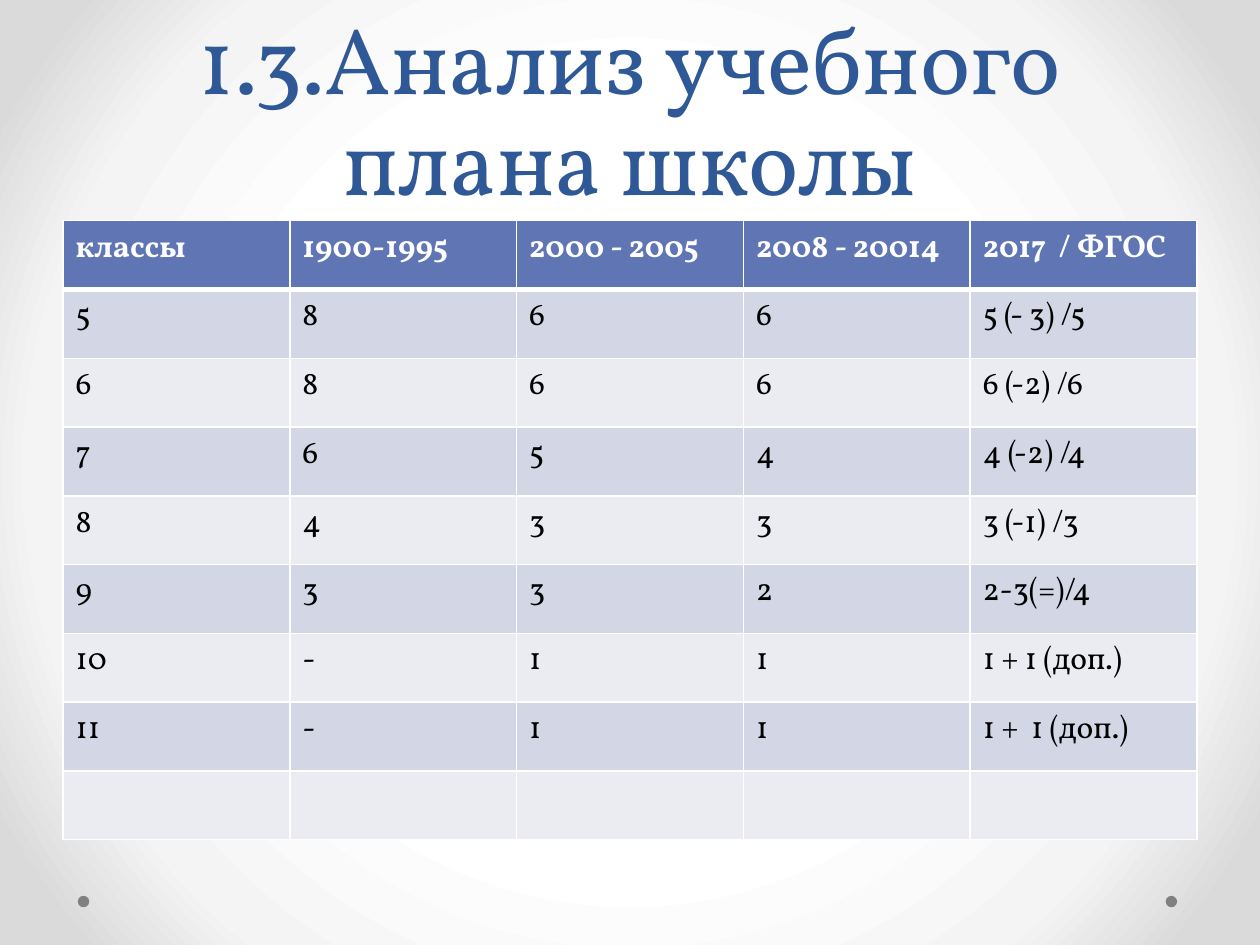
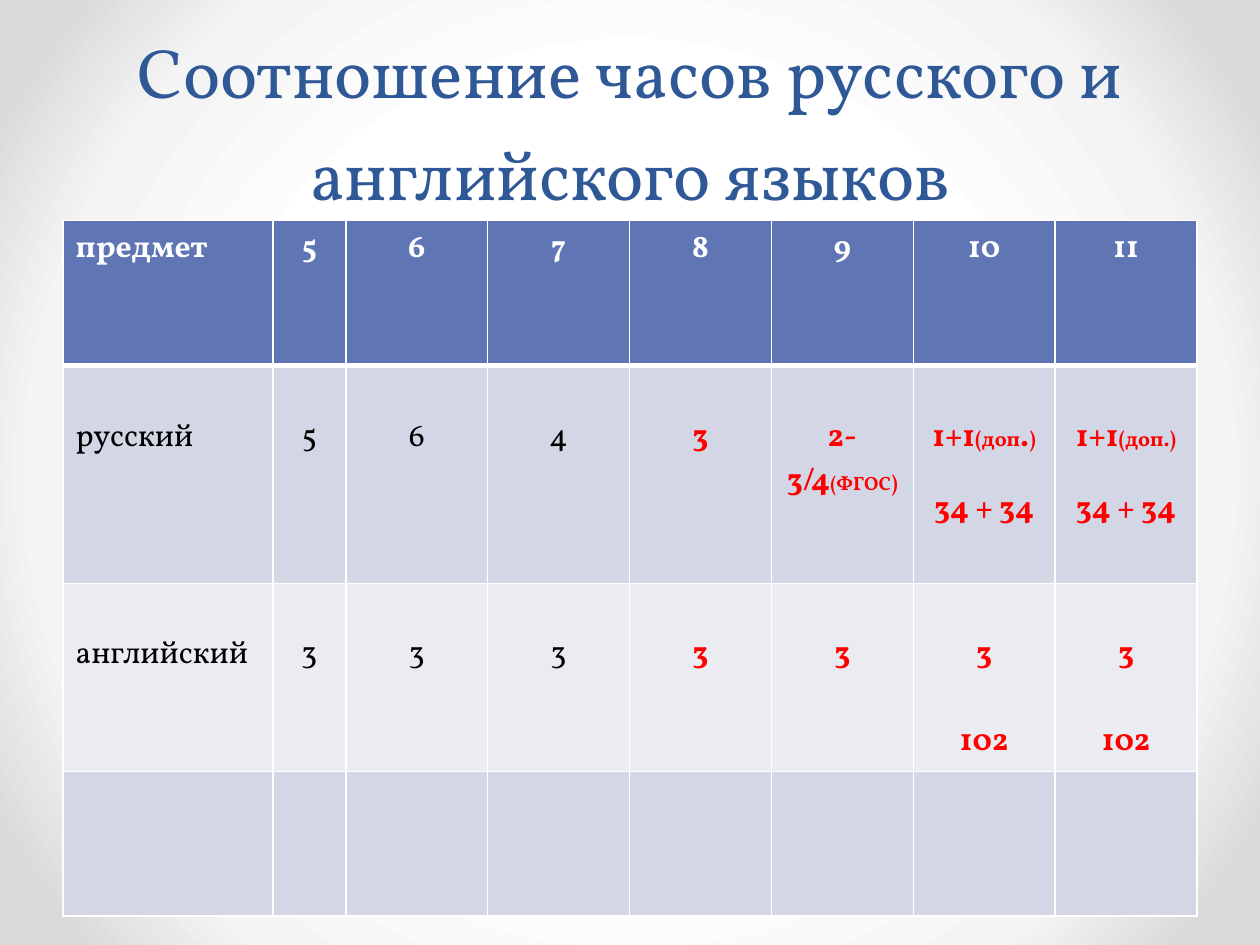
from pptx import Presentation, oxml
from pptx import util as u
from pptx.dml.color import RGBColor
from pptx.enum import shapes, text
from pptx.oxml import ns

FONT = "Vollkorn"
TITLE_BLUE, HEADER_BLUE = "2F5897", "6076B4"
BANDS = ("D2D6E5", "EAECF2")
WHITE, BLACK, RED, GREY = "FFFFFF", "000000", "FF0000", "808080"
BACKDROP = ((50, WHITE), (76, "F4F4F4"), (92, "DADADA"))
LEFT, CONTENT_WIDTH, TABLE_TOP = 1.27, 22.86, 4.45

PLAN = [
    ["классы", "1900-1995", "2000 - 2005", "2008 - 20014", "2017  / ФГОС"],
    ["5", "8", "6", "6", "5 (- 3) /5"],
    ["6", "8", "6", "6", "6 (-2) /6"],
    ["7", "6", "5", "4", "4 (-2) /4"],
    ["8", "4", "3", "3", "3 (-1) /3"],
    ["9", "3", "3", "2", "2-3(=)/4"],
    ["10", "-", "1", "1", "1 + 1 (доп.)"],
    ["11", "-", "1", "1", "1 +  1 (доп.)"],
    [""] * 5,
]

GRADE_9 = [[("2-3/4", 18), ("(ФГОС", 11), (")", 12)]]
EXTRA_HOURS = [("34 + 34", 18)]
GRADE_10 = [[("1+1", 18), ("(доп", 12), (".", 18), (")", 12)], EXTRA_HOURS]
GRADE_11 = [[("1+1", 18), ("(доп.)", 12)], EXTRA_HOURS]
ENGLISH_SENIOR = [[("3", 18)], [("102", 18)]]
HOURS = [
    ["предмет", "5", "6", "7", "8", "9", "10", "11"],
    ["русский", "5", "6", "4", "3", GRADE_9, GRADE_10, GRADE_11],
    ["английский", "3", "3", "3", "3", "3", ENGLISH_SENIOR, ENGLISH_SENIOR],
    [""] * 8,
]
FIRST_RED_COLUMN = 4


def rgb(value):
    """Turn a hex string into a colour."""
    return RGBColor.from_string(value)


def apply(target, values):
    """Set every attribute named in a dict of format values."""
    for name, value in values.items():
        setattr(target, name, value)


def add_run(paragraph, words, size, color, bold=False):
    """Append one formatted run."""
    run = paragraph.add_run()
    run.text = words
    apply(run.font, {"name": FONT, "size": u.Pt(size), "bold": bold})
    run.font.color.rgb = rgb(color)


def set_backdrop(master):
    """Give the master its round grey gradient."""
    stops = "".join(
        f'<a:gs pos="{position * 1000}"><a:srgbClr val="{color}"/></a:gs>'
        for position, color in BACKDROP)
    backdrop = oxml.parse_xml(
        f'<p:bg {ns.nsdecls("p", "a")}><p:bgPr><a:gradFill rotWithShape="1">'
        f'<a:gsLst>{stops}</a:gsLst><a:path path="circle">'
        '<a:fillToRect l="50000" t="50000" r="50000" b="50000"/></a:path>'
        '</a:gradFill><a:effectLst/></p:bgPr></p:bg>')
    common = master.element.cSld
    for old in common.findall(ns.qn("p:bg")):
        common.remove(old)
    common.insert(0, backdrop)


def add_master_dots(slide, master):
    """Place the two footer dots on the master."""
    for left in (23.5, 1.57):
        dot = slide.shapes.add_shape(
            shapes.MSO_SHAPE.OVAL, u.Cm(left), u.Cm(18.06), u.Cm(0.23), u.Cm(0.23))
        dot.shadow.inherit = False
        dot.fill.solid()
        dot.fill.fore_color.rgb = rgb(GREY)
        dot.line.fill.background()
        master.element.cSld.spTree.append(dot.element)


def add_titled_slide(deck, heading, size):
    """Add a slide with the shared title style."""
    slide = deck.slides.add_slide(deck.slide_layouts[5])
    title = slide.shapes.title
    apply(title, {"left": u.Cm(LEFT), "top": u.Cm(0.33),
                  "width": u.Cm(CONTENT_WIDTH), "height": u.Cm(4.12)})
    apply(title.text_frame, {"word_wrap": True,
                             "auto_size": text.MSO_AUTO_SIZE.NONE,
                             "vertical_anchor": text.MSO_ANCHOR.BOTTOM})
    paragraph = title.text_frame.paragraphs[0]
    apply(paragraph, {"alignment": text.PP_ALIGN.CENTER, "line_spacing": u.Pt(58)})
    add_run(paragraph, heading, size, TITLE_BLUE)
    return slide


def set_borders(cell, top, bottom):
    """Draw white borders of the given point widths."""
    widths = {"lnL": 1, "lnR": 1, "lnT": top, "lnB": bottom}
    properties = cell._tc.get_or_add_tcPr()
    for place, (side, width) in enumerate(widths.items()):
        properties.insert(place, oxml.parse_xml(
            f'<a:{side} {ns.nsdecls("a")} w="{u.Pt(width)}"><a:solidFill>'
            f'<a:srgbClr val="{WHITE}"/></a:solidFill></a:{side}>'))


def fill_cell(cell, content, color, bold, alignment, gap):
    """Write a plain string or a list of paragraphs made of sized runs."""
    paragraphs = [[(content, 18)]] if isinstance(content, str) else content
    for index, runs in enumerate(paragraphs):
        frame = cell.text_frame
        paragraph = frame.add_paragraph() if index else frame.paragraphs[0]
        paragraph.alignment = alignment
        if index:
            paragraph.space_before = u.Pt(gap)
        for words, size in runs:
            if words:
                add_run(paragraph, words, size, color, bold)


def add_grid(slide, rows, widths, heights, centred=False, body_top=0.13,
             red_from=None, gaps=None):
    """Add a banded table with a header row."""
    grid = slide.shapes.add_table(
        len(rows), len(widths), u.Cm(LEFT), u.Cm(TABLE_TOP),
        u.Cm(sum(widths)), u.Cm(sum(heights))).table
    grid.horz_banding = False
    for column, width in zip(grid.columns, widths):
        column.width = u.Cm(width)
    for r, (row, height) in enumerate(zip(rows, heights)):
        grid.rows[r].height = u.Cm(height)
        for c, content in enumerate(row):
            cell = grid.cell(r, c)
            header = r == 0
            red = not header and red_from is not None and c >= red_from
            cell.fill.solid()
            cell.fill.fore_color.rgb = rgb(HEADER_BLUE if header else BANDS[(r - 1) % 2])
            set_borders(cell, 3 if r == 1 else 1, 3 if header else 1)
            if not header and content:
                cell.margin_top = u.Cm(body_top)
            color = WHITE if header else RED if red else BLACK
            alignment = text.PP_ALIGN.CENTER if centred and c else text.PP_ALIGN.LEFT
            fill_cell(cell, content, color, header or red, alignment,
                      gaps[r] if gaps else 0)


def main():
    """Build the two curriculum slides."""
    deck = Presentation()
    apply(deck, {"slide_width": u.Cm(25.4), "slide_height": u.Cm(19.05)})
    set_backdrop(deck.slide_master)

    plan = add_titled_slide(deck, "1.3.Анализ учебного плана школы", 54)
    add_master_dots(plan, deck.slide_master)
    add_grid(plan, PLAN, [CONTENT_WIDTH / 5] * 5, [12.48 / 9] * 9)

    hours = add_titled_slide(
        deck, "Соотношение часов русского и английского языков", 40)
    add_grid(hours, HOURS, [4.23, 1.47] + [2.86] * 6, [2.92, 4.39, 3.79, 2.92],
             centred=True, body_top=1.02, red_from=FIRST_RED_COLUMN,
             gaps=[0, 16.5, 24.5, 0])
    deck.save("out.pptx")


if __name__ == "__main__":
    main()
